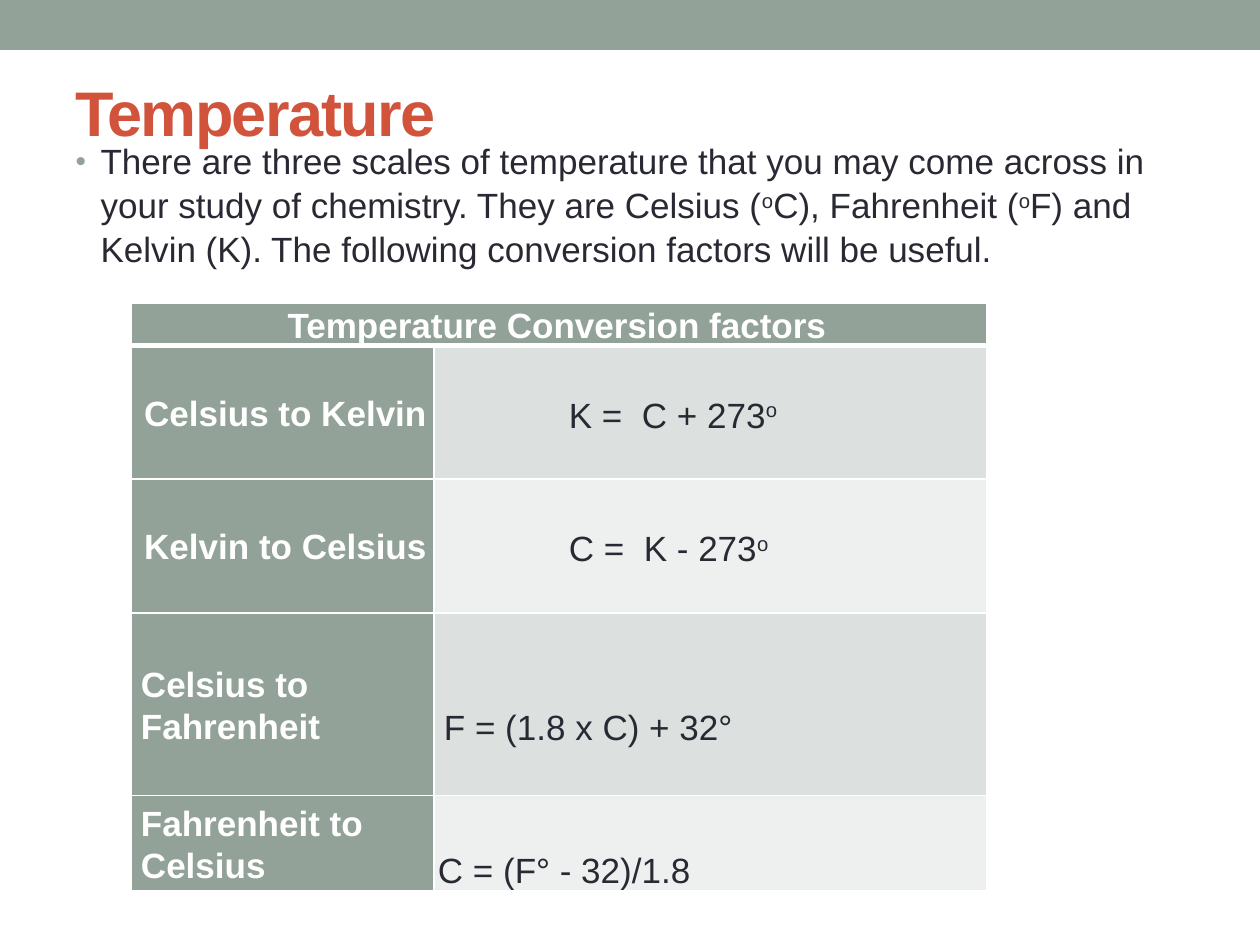
from pptx import Presentation
from pptx.dml.color import RGBColor
from pptx.enum.shapes import MSO_SHAPE
from pptx.enum.text import MSO_ANCHOR, PP_ALIGN
from pptx.oxml import parse_xml
from pptx.oxml.ns import nsdecls
from pptx.util import Pt

TOP, MIDDLE, BOTTOM = MSO_ANCHOR.TOP, MSO_ANCHOR.MIDDLE, MSO_ANCHOR.BOTTOM
LEFT, CENTER = PP_ALIGN.LEFT, PP_ALIGN.CENTER
PX = 914400 // 126

THEME = {
    "font": "Arial", "title_size": 36, "text_size": 20,
    "sage": "93A299", "red": "D2533C", "ink": "292934", "white": "FFFFFF",
    "bands": ("DCE0DE", "EEF0EF"),
}

# A list of parts alternates normal and superscript text.
TITLE = "Temperature"
INTRO = ["There are three scales of temperature that you may come across in your "
         "study of chemistry. They are Celsius (", "o", "C), Fahrenheit (", "o",
         "F) and Kelvin (K). The following conversion factors will be useful."]
HEADER = "Temperature Conversion factors "
# label, label alignment, formula, formula anchor, (left, top) margins, row height
CONVERSIONS = [
    ("Celsius to Kelvin ", CENTER, ["K =  C + 273", "o"], MIDDLE, (135, 5), 133),
    ("Kelvin to Celsius ", CENTER, ["C =  K - 273", "o"], MIDDLE, (135, 5), 134),
    ("Celsius to Fahrenheit", LEFT, ["F = (1.8 x C) + 32°"], MIDDLE, (10, 46), 183),
    ("Fahrenheit to Celsius", LEFT, ["C = (F° - 32)/1.8"], BOTTOM, (4, 3), 95),
]
HEADER_H = 42
COLUMNS = (303, 553)
TABLE_AT = (131, 303)


def px(*values):
    return [v * PX for v in values]


def rgb(name):
    return RGBColor.from_string(THEME.get(name, name))


def write(p, parts, color, bold=False, size="text_size"):
    for i, text in enumerate(parts):
        r = p.add_run()
        r.text = text
        f = r.font
        f.name, f.size, f.bold = THEME["font"], Pt(THEME[size]), bold
        f.color.rgb = rgb(color)
        if i % 2:
            r._r.get_or_add_rPr().set("baseline", "30000")


def place(shape, *box):
    shape.left, shape.top, shape.width, shape.height = px(*box)


def set_borders(cell, bottom=1):
    tcPr = cell._tc.get_or_add_tcPr()
    for i, side in enumerate("LRTB"):
        width = Pt(bottom if side == "B" else 1)
        tcPr.insert(i, parse_xml(
            f'<a:ln{side} {nsdecls("a")} w="{width}"><a:solidFill>'
            f'<a:srgbClr val="{THEME["white"]}"/></a:solidFill></a:ln{side}>'))


def fill_cell(cell, parts, fill, color, bold=False, align=LEFT, anchor=MIDDLE,
              margins=(10, 1), bottom=1):
    cell.fill.solid()
    cell.fill.fore_color.rgb = rgb(fill)
    cell.margin_left, cell.margin_top = px(*margins)
    cell.margin_right, cell.margin_bottom = px(4, 0)
    cell.vertical_anchor = anchor
    p = cell.text_frame.paragraphs[0]
    p.alignment, p.line_spacing = align, 1.07
    write(p, parts, color, bold)
    set_borders(cell, bottom)


def add_title(s):
    title = s.shapes.title
    place(title, 63, 73, 1134, 136)
    tf = title.text_frame
    tf.vertical_anchor, tf.margin_top = TOP, 0
    p = tf.paragraphs[0]
    p.alignment = LEFT
    write(p, [TITLE], "red", True, "title_size")
    p.runs[0]._r.get_or_add_rPr().set("spc", "-100")


def add_intro(s):
    body = s.placeholders[1]
    place(body, 63, 132, 1134, 760)
    p = body.text_frame.paragraphs[0]
    p.space_before, p.line_spacing = Pt(4), 1.04
    write(p, INTRO, "ink")
    pPr = p._p.get_or_add_pPr()
    pPr.set("marL", str(25 * PX))
    pPr.set("indent", str(-25 * PX))
    for xml in (f'<a:buClr {nsdecls("a")}><a:srgbClr val="{THEME["sage"]}"/></a:buClr>',
                f'<a:buSzPct {nsdecls("a")} val="85000"/>',
                f'<a:buFont {nsdecls("a")} typeface="{THEME["font"]}"/>',
                f'<a:buChar {nsdecls("a")} char="•"/>'):
        pPr.append(parse_xml(xml))


def add_conversions(s):
    heights = [HEADER_H] + [row[-1] for row in CONVERSIONS]
    table = s.shapes.add_table(len(heights), len(COLUMNS), *px(
        *TABLE_AT, sum(COLUMNS), sum(heights))).table
    for column, w in zip(table.columns, COLUMNS):
        column.width = w * PX
    for row, h in zip(table.rows, heights):
        row.height = h * PX
    head = table.cell(0, 0)
    head.merge(table.cell(0, 1))
    fill_cell(head, [HEADER], "sage", "white", True, CENTER, TOP, bottom=3)
    for i, (label, align, formula, anchor, margins, _) in enumerate(CONVERSIONS):
        fill_cell(table.cell(i + 1, 0), [label], "sage", "white", True, align)
        fill_cell(table.cell(i + 1, 1), formula, THEME["bands"][i % 2], "ink",
                  anchor=anchor, margins=margins)


def main():
    prs = Presentation()
    prs.slide_width, prs.slide_height = px(1260, 945)
    s = prs.slides.add_slide(prs.slide_layouts[1])
    band = s.shapes.add_shape(MSO_SHAPE.RECTANGLE, *px(0, 0, 1260, 50))
    band.shadow.inherit = False
    band.fill.solid()
    band.fill.fore_color.rgb = rgb("sage")
    band.line.fill.background()
    add_title(s)
    add_intro(s)
    add_conversions(s)
    prs.save("out.pptx")


if __name__ == "__main__":
    main()
